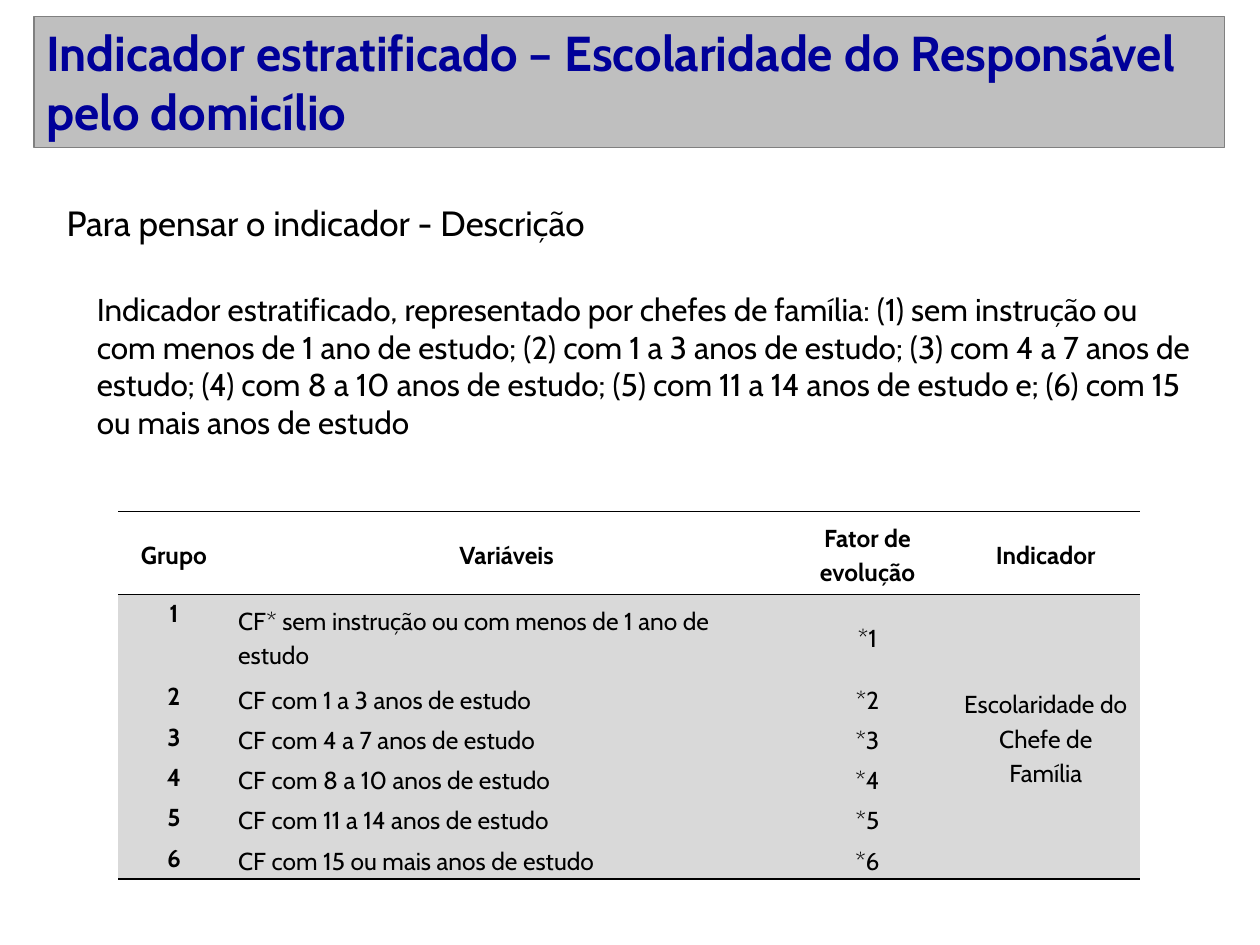
from dataclasses import dataclass

import lxml.etree
import pptx
import pptx.dml.color
import pptx.enum.text
import pptx.oxml.ns
import pptx.util

Inches = pptx.util.Inches
Pt = pptx.util.Pt
RGB = pptx.dml.color.RGBColor
Align = pptx.enum.text.PP_ALIGN
Anchor = pptx.enum.text.MSO_ANCHOR


@dataclass(frozen=True)
class Theme:
    font: str = "Cabin"
    ink: str = "000000"
    title_ink: str = "000099"
    title_fill: str = "BFBFBF"
    title_line: str = "808080"
    row_fill: str = "D9D9D9"
    title_size: float = 28
    heading_size: float = 20
    body_size: float = 18
    table_size: float = 14


@dataclass(frozen=True)
class Box:
    left: float
    top: float
    width: float
    height: float

    def lengths(self) -> list:
        return [Inches(n) for n in (self.left, self.top, self.width, self.height)]


@dataclass(frozen=True)
class TextBlock:
    box: Box
    text: str
    size: float


@dataclass(frozen=True)
class Column:
    heading: str
    width: float
    align: Align = Align.CENTER
    anchor: Anchor = Anchor.MIDDLE
    bold: bool = False


THEME = Theme()
TITLE = "Indicador estratificado – Escolaridade do Responsável pelo domicílio"
TITLE_BOX = Box(0.27, 0.13, 9.45, 1.04)
BLOCKS = [
    TextBlock(Box(0.43, 1.55, 8.9, 0.44), "Para pensar o indicador - Descrição", THEME.heading_size),
    TextBlock(
        Box(0.67, 2.25, 8.9, 1.31),
        "Indicador estratificado, representado por chefes de família: "
        "(1) sem instrução ou com menos de 1 ano de estudo; "
        "(2) com 1 a 3 anos de estudo; (3) com 4 a 7 anos de estudo; "
        "(4) com 8 a 10 anos de estudo; (5) com 11 a 14 anos de estudo e; "
        "(6) com 15 ou mais anos de estudo",
        THEME.body_size,
    ),
]
TABLE_BOX = Box(0.94, 4.06, 8.11, 2.92)
COLUMNS = [
    Column("Grupo", 0.88, anchor=Anchor.TOP, bold=True),
    Column("Variáveis", 4.4, align=Align.LEFT),
    Column("Fator de evolução", 1.33),
    Column("Indicador", 1.5),
]
VARIABLES = [
    "CF* sem instrução ou com menos de 1 ano de estudo",
    "CF com 1 a 3 anos de estudo",
    "CF com 4 a 7 anos de estudo",
    "CF com 8 a 10 anos de estudo",
    "CF com 11 a 14 anos de estudo",
    "CF com 15 ou mais anos de estudo",
]
INDICATOR = "Escolaridade do Chefe de Família"
TALL_ROW, SHORT_ROW = 0.66, 0.32
NO_GRID_STYLE = "{2D5ABB26-0587-4C30-8999-92F81FD0307C}"


def write(frame, text: str, size: float, color: str = THEME.ink, bold: bool = False,
          align: Align = Align.LEFT):
    """Fill a text frame with one formatted paragraph and return that paragraph."""
    frame.text = text
    para = frame.paragraphs[0]
    para.alignment = align
    for span in para.runs:
        span.font.name = THEME.font
        span.font.size = Pt(size)
        span.font.bold = bold
        span.font.color.rgb = RGB.from_string(color)
    return para


def format_title(title) -> None:
    title.left, title.top, title.width, title.height = TITLE_BOX.lengths()
    title.fill.solid()
    title.fill.fore_color.rgb = RGB.from_string(THEME.title_fill)
    title.line.color.rgb = RGB.from_string(THEME.title_line)
    title.line.width = Pt(0.75)
    frame = title.text_frame
    frame.auto_size = pptx.enum.text.MSO_AUTO_SIZE.NONE
    frame.vertical_anchor = Anchor.TOP
    write(frame, TITLE, THEME.title_size, THEME.title_ink, bold=True)


def add_text(slide, block: TextBlock) -> None:
    frame = slide.shapes.add_textbox(*block.box.lengths()).text_frame
    frame.word_wrap = True
    write(frame, block.text, block.size)


def add_rule(cell, side: str) -> None:
    """Draw a thin border on one side of a cell: "T" for top, "B" for bottom."""
    name = pptx.oxml.ns.qn
    properties = cell._tc.get_or_add_tcPr()
    line = lxml.etree.SubElement(properties, name(f"a:ln{side}"), w=str(Pt(1)))
    fill = lxml.etree.SubElement(line, name("a:solidFill"))
    lxml.etree.SubElement(fill, name("a:srgbClr"), val=THEME.ink)


def fill_cell(cell, text: str, column: Column, is_header: bool) -> None:
    cell.margin_left = cell.margin_right = Inches(0.07)
    cell.margin_top = cell.margin_bottom = 0
    cell.vertical_anchor = Anchor.MIDDLE if is_header else column.anchor
    if is_header:
        cell.fill.background()
    else:
        cell.fill.solid()
        cell.fill.fore_color.rgb = RGB.from_string(THEME.row_fill)
    para = write(cell.text_frame, text, THEME.table_size,
                 bold=is_header or column.bold,
                 align=Align.CENTER if is_header else column.align)
    para.line_spacing = 1.15


def add_group_table(slide) -> None:
    rows = [[column.heading for column in COLUMNS]]
    for number, variable in enumerate(VARIABLES, start=1):
        rows.append([str(number), variable, f"*{number}", INDICATOR if number == 1 else ""])
    last = len(rows) - 1

    table = slide.shapes.add_table(len(rows), len(COLUMNS), *TABLE_BOX.lengths()).table
    table.first_row = table.horz_banding = False
    table._tbl.tblPr.find(pptx.oxml.ns.qn("a:tableStyleId")).text = NO_GRID_STYLE
    for index, column in enumerate(COLUMNS):
        table.columns[index].width = Inches(column.width)
    for r, texts in enumerate(rows):
        table.rows[r].height = Inches(TALL_ROW if r < 2 else SHORT_ROW)
        for c, column in enumerate(COLUMNS):
            cell = table.cell(r, c)
            if r == 0:
                add_rule(cell, "T")
            spans_to_end = r == 1 and column is COLUMNS[-1]
            if r in (0, last) or spans_to_end:
                add_rule(cell, "B")
            fill_cell(cell, texts[c], column, is_header=r == 0)
    table.cell(1, len(COLUMNS) - 1).merge(table.cell(last, len(COLUMNS) - 1))


def main() -> None:
    deck = pptx.Presentation()
    deck.slide_width, deck.slide_height = Inches(10), Inches(7.5)
    slide = deck.slides.add_slide(deck.slide_layouts.get_by_name("Title Only"))
    format_title(slide.shapes.title)
    for block in BLOCKS:
        add_text(slide, block)
    add_group_table(slide)
    deck.save("out.pptx")


if __name__ == "__main__":
    main()
